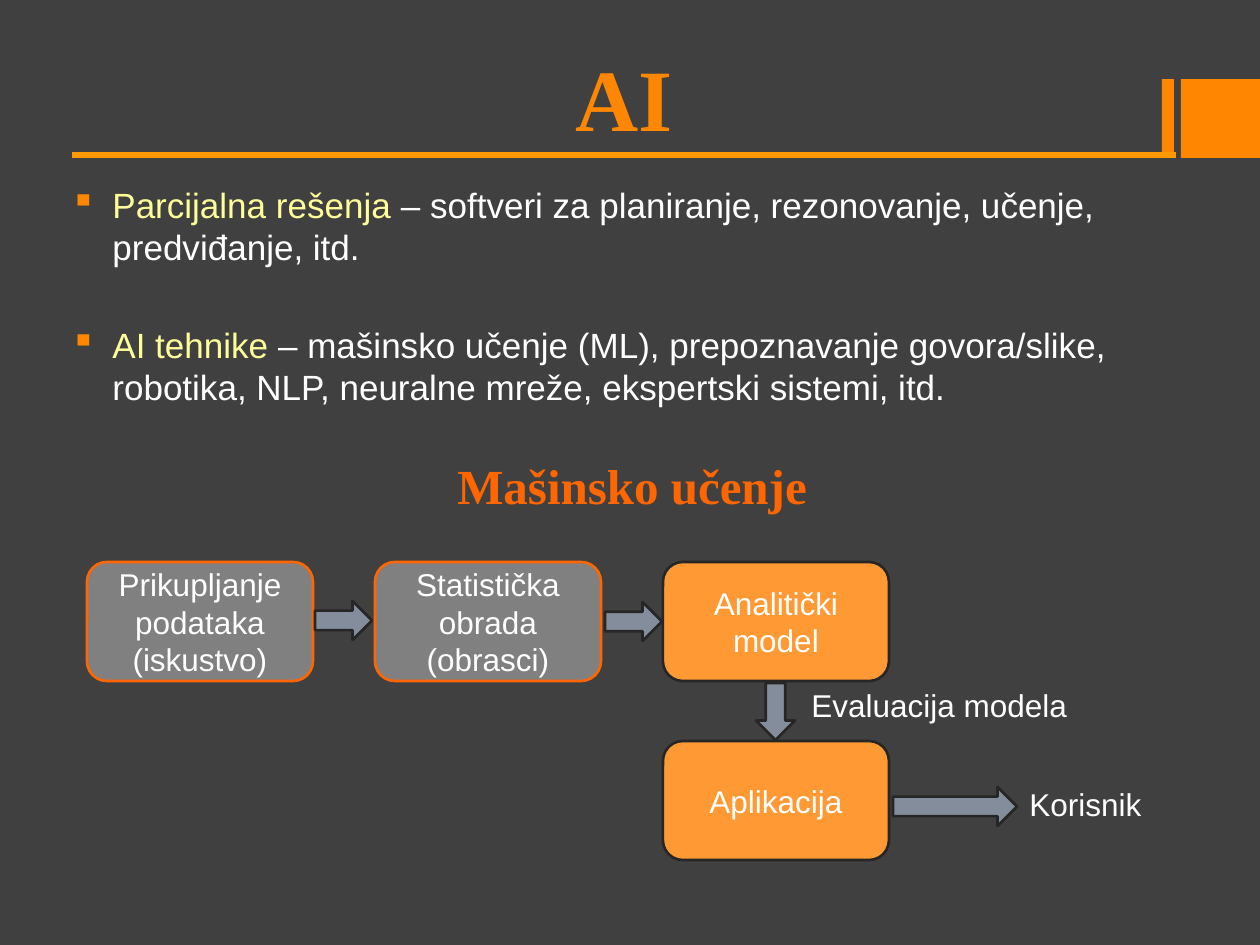
from lxml import etree
from pptx import Presentation
from pptx.dml.color import RGBColor
from pptx.enum.shapes import MSO_CONNECTOR, MSO_SHAPE
from pptx.enum.text import MSO_ANCHOR, MSO_AUTO_SIZE, PP_ALIGN
from pptx.oxml.ns import qn
from pptx.util import Emu, Pt

RECT, ROUNDED, ARROW = MSO_SHAPE.RECTANGLE, MSO_SHAPE.ROUNDED_RECTANGLE, MSO_SHAPE.RIGHT_ARROW
STRAIGHT = MSO_CONNECTOR.STRAIGHT
MIDDLE, BOTTOM = MSO_ANCHOR.MIDDLE, MSO_ANCHOR.BOTTOM
CENTER, LEFT = PP_ALIGN.CENTER, PP_ALIGN.LEFT
NO_FIT = MSO_AUTO_SIZE.NONE
SANS, SERIF = "Arial", "Times New Roman"
COLORS = {
    "background": "404040", "accent": "FF8600", "rule": "FF9900", "term": "FFFF99",
    "text": "FFFFFF", "heading": "FF6600", "step": "808080", "step_line": "FF6600",
    "result": "FF9933", "dark_line": "262626", "arrow": "838D9B",
}


def px(n):
    return Emu(round(n * 914400 / 126))


def rgb(name):
    return RGBColor.from_string(COLORS[name])


def add_run(p, text, size, color="text", font=SANS, bold=False):
    r = p.add_run()
    r.text = text
    r.font.size, r.font.name, r.font.bold = Pt(size), font, bold
    r.font.color.rgb = rgb(color)


def add_lines(p, lines, size, color="text"):
    """Add one run per line, with line breaks between them."""
    for i, line in enumerate(lines):
        if i:
            p.add_line_break()
        add_run(p, line, size, color)


def add_shape(s, kind, x, y, w, h, fill, line=None):
    sp = s.shapes.add_shape(kind, px(x), px(y), px(w), px(h))
    sp.shadow.inherit = False
    sp.fill.solid()
    sp.fill.fore_color.rgb = rgb(fill)
    if line:
        sp.line.color.rgb = rgb(line)
        sp.line.width = Pt(1.5)
    else:
        sp.line.fill.background()
    return sp


def indent(p, left, hanging=0, bullet=None):
    pPr = p._p.get_or_add_pPr()
    pPr.set("marL", str(px(left)))
    pPr.set("indent", str(-px(hanging)))
    if bullet:
        color = etree.SubElement(pPr, qn("a:buClr"))
        etree.SubElement(color, qn("a:srgbClr")).set("val", COLORS["accent"])
        etree.SubElement(pPr, qn("a:buChar")).set("char", bullet)


def add_title(s, x, y, w, h):
    title = s.shapes.title
    title.left, title.top, title.width, title.height = px(x), px(y), px(w), px(h)
    tf = title.text_frame
    tf.auto_size, tf.vertical_anchor = NO_FIT, BOTTOM
    p = tf.paragraphs[0]
    p.alignment = CENTER
    add_run(p, "AI", 50, "accent", SERIF, True)

    rule = s.shapes.add_connector(STRAIGHT, px(x), px(y + h), px(x + w), px(y + h))
    rule.line.color.rgb = rgb("rule")
    rule.line.width = Pt(3)
    etree.SubElement(rule._element.spPr, qn("a:effectLst"))


def add_corner_bars(s, x, y, size):
    add_shape(s, RECT, x, y, 12, size, "accent")
    add_shape(s, RECT, x + 19, y, size, size, "accent")


def add_body(s, x, y, w, h):
    tf = s.shapes.add_textbox(px(x), px(y), px(w), px(h)).text_frame
    tf.word_wrap = True
    points = [
        ("Parcijalna rešenja ",
         ["– softveri za planiranje, rezonovanje, učenje, predviđanje, itd."], 0),
        ("AI tehnike ",
         ["– mašinsko učenje (ML), prepoznavanje govora/slike, ",
          "robotika, NLP, neuralne mreže, ekspertski sistemi, itd."], 32),
    ]
    for i, (term, lines, gap) in enumerate(points):
        p = tf.add_paragraph() if i else tf.paragraphs[0]
        p.alignment, p.line_spacing, p.space_before = LEFT, Pt(24), Pt(gap)
        indent(p, 48, 42, "▪")
        add_run(p, term, 20, "term")
        add_lines(p, lines, 20)

    p = tf.add_paragraph()
    p.alignment, p.line_spacing, p.space_before = CENTER, Pt(34), Pt(27.5)
    indent(p, 6)
    add_run(p, "Mašinsko učenje", 28, "heading", SERIF, True)


def add_flow(s, x, y):
    """Draw the machine learning flow with its top left corner at x, y."""
    box_w, box_h, col_step, row_step = 226, 119, 288, 179
    boxes = [
        (0, 0, ["Prikupljanje podataka (iskustvo)"], "step", "step_line"),
        (1, 0, ["Statistička obrada", "(obrasci)"], "step", "step_line"),
        (2, 0, ["Analitički model"], "result", "dark_line"),
        (2, 1, ["Aplikacija"], "result", "dark_line"),
    ]
    for col, row, lines, fill, line in boxes:
        sp = add_shape(s, ROUNDED, x + col * col_step, y + row * row_step,
                       box_w, box_h, fill, line)
        tf = sp.text_frame
        tf.word_wrap, tf.vertical_anchor = True, MIDDLE
        p = tf.paragraphs[0]
        p.alignment = CENTER
        add_lines(p, lines, 18)

    arrows = [(228, 39, 57, 0), (518, 40, 57, 0), (660, 130, 57, 90), (806, 225, 124, 0)]
    for dx, dy, w, angle in arrows:
        sp = add_shape(s, ARROW, x + dx, y + dy, w, 39, "arrow", "dark_line")
        sp.rotation = angle

    labels = [("Evaluacija modela", 712, 118, 284), ("Korisnik", 930, 217, 139)]
    for text, dx, dy, w in labels:
        tf = s.shapes.add_textbox(px(x + dx), px(y + dy), px(w), px(50)).text_frame
        tf.word_wrap = False
        add_run(tf.paragraphs[0], text, 18)


def main():
    prs = Presentation()
    prs.slide_width, prs.slide_height = px(1260), px(945)
    s = prs.slides.add_slide(prs.slide_layouts[5])
    s.background.fill.solid()
    s.background.fill.fore_color.rgb = rgb("background")
    add_corner_bars(s, 1162, 79, 79)
    add_title(s, 72, 32, 1104, 123)
    add_body(s, 52, 177, 1154, 365)
    add_flow(s, 87, 562)
    prs.save("out.pptx")


if __name__ == "__main__":
    main()
